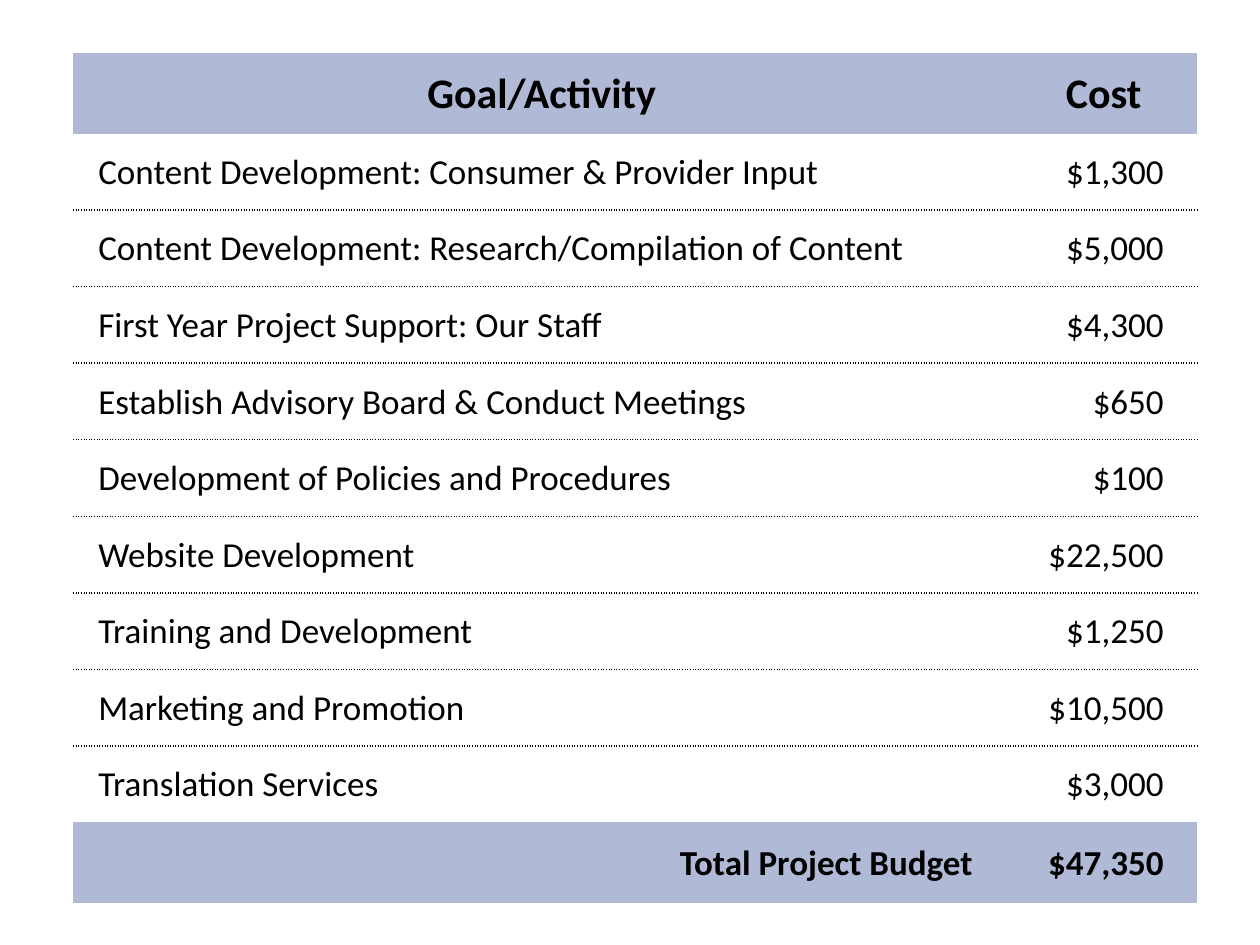
"""Build a one-slide project budget table."""
from dataclasses import dataclass

from lxml.etree import SubElement
from pptx import Presentation
from pptx.dml.color import RGBColor
from pptx.enum.text import MSO_ANCHOR, PP_ALIGN
from pptx.oxml.ns import qn
from pptx.util import Inches, Pt


@dataclass(frozen=True)
class Theme:
    font: str = "Calibri"
    text: str = "000000"
    band: str = "B0BAD7"
    head_size: int = 24
    body_size: int = 20


THEME = Theme()
HEADER = ("Goal/Activity", "Cost")
ACTIVITIES = [
    ("Content Development: Consumer & Provider Input", "$1,300 "),
    ("Content Development: Research/Compilation of Content", "$5,000 "),
    ("First Year Project Support: Our Staff", "$4,300 "),
    ("Establish Advisory Board & Conduct Meetings", "$650 "),
    ("Development of Policies and Procedures", "$100 "),
    ("Website Development", "$22,500 "),
    ("Training and Development", "$1,250 "),
    ("Marketing and Promotion", "$10,500 "),
    ("Translation Services", "$3,000 "),
]
TOTAL = ("Total Project Budget", "$47,350 ")

LEFT, TOP, HEIGHT = 0.58, 0.42, 6.75
COL_WIDTHS = (7.44, 1.48)
BAND_HEIGHT = 0.64
PAD = 0.01
LEFT_ALIGN, CENTER, RIGHT = PP_ALIGN.LEFT, PP_ALIGN.CENTER, PP_ALIGN.RIGHT
HEAD_FORMAT = [(CENTER, PAD, PAD), (CENTER, PAD, PAD)]
BODY_FORMAT = [(LEFT_ALIGN, 0.2, PAD), (RIGHT, PAD, 0.2)]
TOTAL_FORMAT = [(RIGHT, PAD, 0.3), (RIGHT, PAD, 0.2)]


def set_borders(cell, dotted):
    """Dot the named sides of a cell and clear the others."""
    tc_pr = cell._tc.get_or_add_tcPr()
    for side in "LRTB":
        ln = SubElement(tc_pr, qn(f"a:ln{side}"), w=str(Pt(1)))
        if side in dotted:
            fill = SubElement(ln, qn("a:solidFill"))
            SubElement(fill, qn("a:srgbClr"), val=THEME.text)
            SubElement(ln, qn("a:prstDash"), val="sysDot")
        else:
            SubElement(ln, qn("a:noFill"))


def fill_row(row, texts, formats, size=THEME.body_size, band=False, dotted=""):
    """Write and format one table row."""
    for cell, text, (align, left, right) in zip(row.cells, texts, formats):
        cell.margin_left, cell.margin_right = Inches(left), Inches(right)
        cell.margin_top, cell.margin_bottom = Inches(PAD), 0
        cell.vertical_anchor = MSO_ANCHOR.MIDDLE
        set_borders(cell, dotted)
        if band:
            cell.fill.solid()
            cell.fill.fore_color.rgb = RGBColor.from_string(THEME.band)
        else:
            cell.fill.background()
        p = cell.text_frame.paragraphs[0]
        p.text = text
        p.alignment = align
        p.font.name = THEME.font
        p.font.size = Pt(size)
        p.font.bold = band
        p.font.color.rgb = RGBColor.from_string(THEME.text)


def main():
    """Create the slide and save it."""
    prs = Presentation()
    prs.slide_width, prs.slide_height = Inches(10), Inches(7.5)
    s = prs.slides.add_slide(prs.slide_layouts[6])
    count = len(ACTIVITIES)
    table = s.shapes.add_table(
        count + 2, len(COL_WIDTHS), Inches(LEFT), Inches(TOP),
        Inches(sum(COL_WIDTHS)), Inches(HEIGHT)).table
    for col, width in zip(table.columns, COL_WIDTHS):
        col.width = Inches(width)

    head, *body, total = table.rows
    head.height = total.height = Inches(BAND_HEIGHT)
    fill_row(head, HEADER, HEAD_FORMAT, THEME.head_size, band=True)
    for i, (row, activity) in enumerate(zip(body, ACTIVITIES)):
        row.height = Inches((HEIGHT - 2 * BAND_HEIGHT) / count)
        dotted = ("T" if i > 0 else "") + ("B" if i < count - 1 else "")
        fill_row(row, activity, BODY_FORMAT, dotted=dotted)
    fill_row(total, TOTAL, TOTAL_FORMAT, band=True)
    prs.save("out.pptx")


if __name__ == "__main__":
    main()
